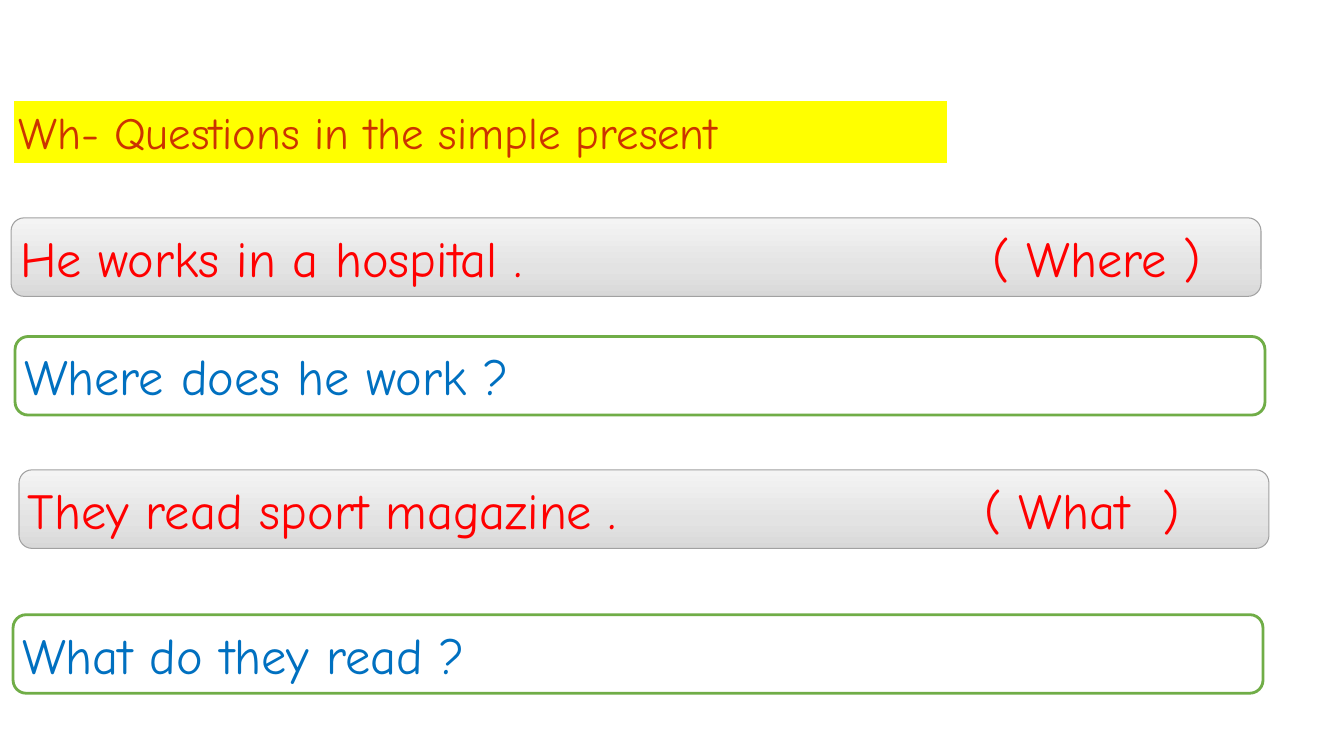
from copy import deepcopy

from pptx import Presentation
from pptx.dml.color import RGBColor
from pptx.enum.shapes import MSO_SHAPE
from pptx.enum.text import MSO_ANCHOR, PP_ALIGN
from pptx.oxml.ns import qn
from pptx.util import Cm, Pt

BANNER = MSO_SHAPE.FLOWCHART_PROCESS
ROUNDED = MSO_SHAPE.ROUNDED_RECTANGLE
MIDDLE = MSO_ANCHOR.MIDDLE
LEFT = PP_ALIGN.LEFT

FONT = "Comic Neue"
GREY_STOPS = [(0, "D8D8D8"), (0.35, "E3E3E3"), (1, "F4F4F4")]
HEADING = "Wh- Questions in the simple present"
EXERCISES = [
    {"sentence": ("He works in a hospital .\t( Where )", 0.28, 5.49, [24.5]),
     "question": ("Where does he work ?", 0.38, 8.48, [])},
    {"sentence": ("They read sport magazine .\t( What\t)", 0.48, 11.84, [24.1, 28.6]),
     "question": ("What do they read ?", 0.33, 15.49, [])},
]
STYLES = {
    "sentence": (GREY_STOPS, "A1A1A1", 0.75, "FF0000"),
    "question": ("FFFFFF", "70AD47", 2, "0070C0"),
}
BAR_WIDTH, BAR_HEIGHT = 31.5, 1.98


def color(value):
    return RGBColor.from_string(value)


def fill_gradient(bar, stops):
    bar.fill.gradient()
    bar.fill.gradient_angle = 90
    stop_list = bar._element.spPr.find(qn("a:gradFill")).find(qn("a:gsLst"))
    stop_list.append(deepcopy(stop_list[-1]))
    for stop, (position, value) in zip(bar.fill.gradient_stops, stops):
        stop.position = position
        stop.color.rgb = color(value)


def add_tabs(paragraph, tabs):
    properties = paragraph._p.get_or_add_pPr()
    tab_list = properties.makeelement(qn("a:tabLst"), {})
    properties.append(tab_list)
    for tab in tabs:
        tab_list.append(tab_list.makeelement(
            qn("a:tab"), {"pos": str(Cm(tab)), "algn": "l"}))


def add_bar(slide, kind, box, style, text, size, tabs=()):
    fill, line, line_width, ink = style
    bar = slide.shapes.add_shape(kind, *map(Cm, box))
    bar.shadow.inherit = False
    if isinstance(fill, str):
        bar.fill.solid()
        bar.fill.fore_color.rgb = color(fill)
    else:
        fill_gradient(bar, fill)
    bar.line.color.rgb = color(line)
    bar.line.width = Pt(line_width)

    frame = bar.text_frame
    frame.word_wrap = True
    frame.vertical_anchor = MIDDLE
    frame.margin_left = frame.margin_right = Cm(0.13)
    frame.margin_top = frame.margin_bottom = Cm(0.13)
    paragraph = frame.paragraphs[0]
    paragraph.text = text
    paragraph.alignment = LEFT
    if tabs:
        add_tabs(paragraph, tabs)
    paragraph.font.name = FONT
    paragraph.font.size = Pt(size)
    paragraph.font.color.rgb = color(ink)


def main():
    """Build the slide on Wh- questions in the simple present."""
    presentation = Presentation()
    presentation.slide_width, presentation.slide_height = Cm(33.87), Cm(19.05)
    slide = presentation.slides.add_slide(presentation.slide_layouts[6])
    add_bar(slide, BANNER, (0.33, 2.51, 23.57, 1.63),
            ("FFFF00", "FFFFFF", 2, "CC3300"), HEADING, 32)
    for exercise in EXERCISES:
        for part, (text, left, top, tabs) in exercise.items():
            add_bar(slide, ROUNDED, (left, top, BAR_WIDTH, BAR_HEIGHT),
                    STYLES[part], text, 36, tabs)
    presentation.save("out.pptx")


if __name__ == "__main__":
    main()
